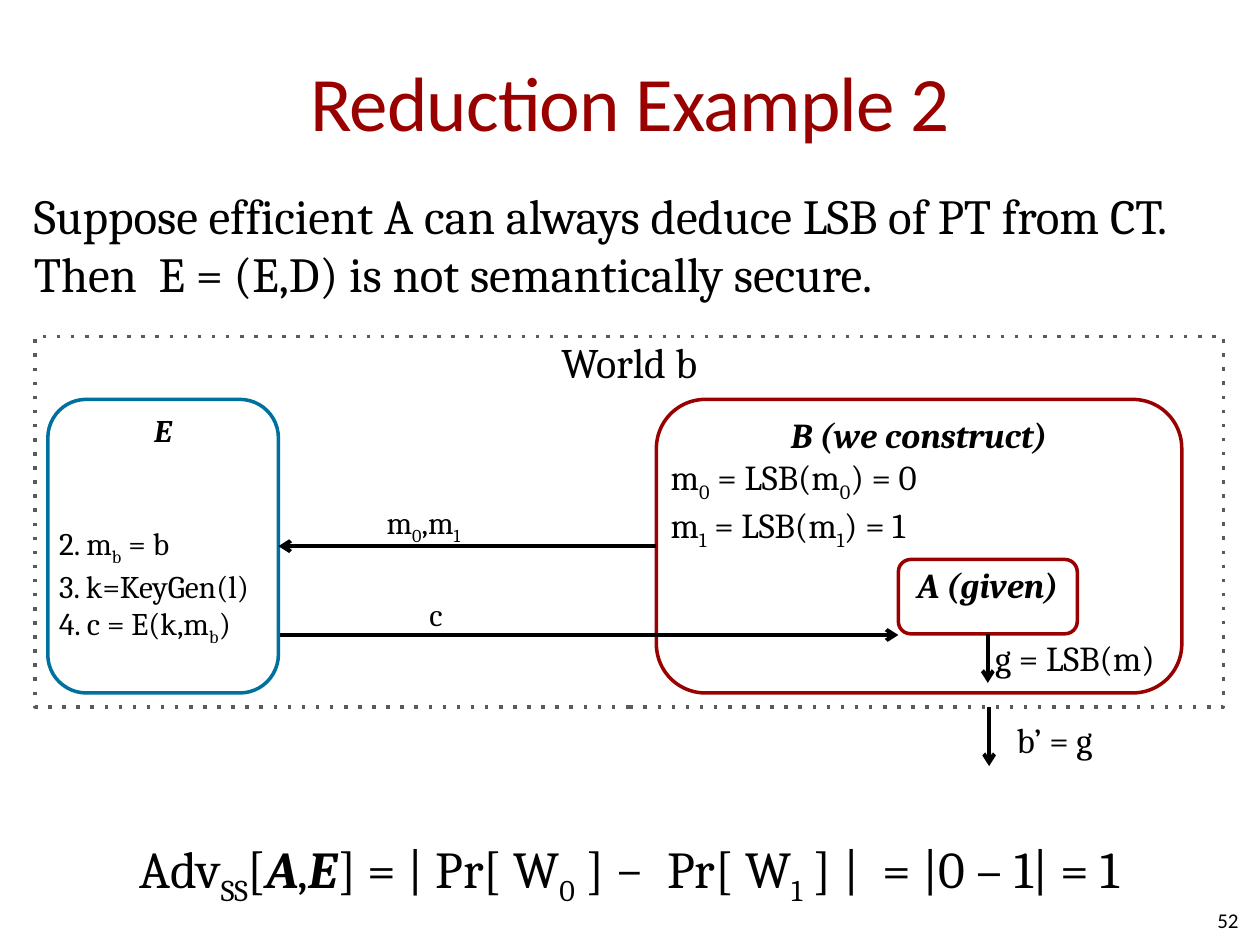
from dataclasses import dataclass

from lxml.etree import SubElement
from pptx import Presentation
from pptx.dml.color import RGBColor
from pptx.enum.shapes import MSO_AUTO_SHAPE_TYPE as Preset, MSO_CONNECTOR as Connector
from pptx.enum.text import MSO_ANCHOR as Anchor, PP_ALIGN as Align
from pptx.oxml.ns import qn
from pptx.util import Inches, Pt


@dataclass(frozen=True)
class Theme:
    """Fonts, colours and sizes of the slide."""
    heading_font: str = "Calibri"
    body_font: str = "Cambria"
    black: str = "000000"
    white: str = "FFFFFF"
    red: str = "990000"
    blue: str = "00709E"
    grey: str = "595A5A"
    title: float = 44
    formula: float = 29.6
    statement: float = 28
    world: float = 24
    party: float = 20
    step: float = 18
    number: float = 12
    outline: float = 2
    arrow: float = 2.25


THEME = Theme()
DEFAULT_INSETS = (0.1, 0.05, 0.1, 0.05)
NO_INSETS = (0, 0, 0, 0)

TITLE = [["Reduction Example 2"]]
STATEMENT = [["Suppose efficient A can always deduce LSB of PT from CT.  "
              "Then  E = (E,D) is not semantically secure."]]
FORMULA = [["Adv", ("SS", "sub"), "[", ("A", "strong"), ",", ("E", "strong"),
            "] = | Pr[ W", ("0", "sub"), " ] −  Pr[ W", ("1", "sub"),
            " ] |  = |0 – 1| = 1"]]
PAGE_NUMBER = [["52"]]

ENCRYPTOR_TEXT = [
    [("E", "strong")],
    ["2. m", ("b", "sub"), " = b"],
    ["3. k=KeyGen(l)"],
    ["4. c = E(k,m", ("b", "sub"), ")"],
]
BUILDER_TEXT = [[("B (we construct)", "strong")]] + [
    ["m", (bit, "sub"), " = LSB(m", (bit, "sub"), f") = {bit}"] for bit in "01"
]

BOXES = {
    "encryptor": (Preset.ROUNDED_RECTANGLE, (0.38, 3.17, 1.83, 2.33), THEME.white,
                  THEME.blue, THEME.step, ENCRYPTOR_TEXT),
    "given": (Preset.ROUNDED_RECTANGLE, (7.13, 4.44, 1.42, 0.59), THEME.white,
              THEME.red, THEME.party, [[("A (given)", "strong")]]),
    "world": (Preset.RECTANGLE, (0.28, 2.67, 9.43, 2.94), None,
              THEME.grey, THEME.world, [["World b"]]),
    "builder": (Preset.ROUNDED_RECTANGLE, (5.21, 3.17, 4.17, 2.33), None,
                THEME.red, THEME.party, BUILDER_TEXT),
}

ARROWS = [
    ((5.21, 4.33), (2.21, 4.33), ("builder", 1), ("encryptor", 3)),
    ((2.22, 5.04), (7.13, 5.04), None, None),
    ((7.84, 5.03), (7.84, 5.42), ("given", 2), None),
    ((7.85, 5.61), (7.85, 6.08), None, None),
]

LABELS = [
    ((2.97, 3.94, 1, 0.58), ["m", ("0", "sub"), ",m", ("1", "sub")],
     THEME.step, Align.LEFT),
    ((3.22, 4.67, 0.48, 0.42), ["c"], THEME.step, Align.CENTER),
    ((7.8, 5, 1.55, 0.42), ["g = LSB(m)"], THEME.party, Align.LEFT),
    ((7.97, 5.65, 1.42, 0.42), ["b’ = g"], THEME.party, Align.LEFT),
]


def write(shape, paragraphs, size, alignments, font=THEME.body_font,
          color=THEME.black, insets=DEFAULT_INSETS, anchor=Anchor.TOP, wrap=True):
    frame = shape.text_frame
    frame.word_wrap = wrap
    frame.vertical_anchor = anchor
    (frame.margin_left, frame.margin_top,
     frame.margin_right, frame.margin_bottom) = map(Inches, insets)
    for index, pieces in enumerate(paragraphs):
        paragraph = frame.add_paragraph() if index else frame.paragraphs[0]
        paragraph.alignment = alignments[min(index, len(alignments) - 1)]
        for piece in pieces:
            text, style = (piece, "") if isinstance(piece, str) else piece
            run = paragraph.add_run()
            run.text = text
            run.font.name = font
            run.font.size = Pt(size)
            run.font.color.rgb = RGBColor.from_string(color)
            run.font.bold = run.font.italic = style == "strong"
            if style == "sub":
                run.font._element.set("baseline", "-25000")
    return frame


def add_text(slide, place, paragraphs, size, alignment, **options):
    shape = slide.shapes.add_textbox(*map(Inches, place))
    return write(shape, paragraphs, size, [alignment], **options)


def add_box(slide, preset, place, fill, line, size, paragraphs):
    shape = slide.shapes.add_shape(preset, *map(Inches, place))
    shape.shadow.inherit = False
    if fill:
        shape.fill.solid()
        shape.fill.fore_color.rgb = RGBColor.from_string(fill)
    else:
        shape.fill.background()
    shape.line.color.rgb = RGBColor.from_string(line)
    shape.line.width = Pt(THEME.outline)
    write(shape, paragraphs, size, [Align.CENTER, Align.LEFT], insets=NO_INSETS)
    return shape


def add_arrow(slide, start, end, source, target, boxes):
    arrow = slide.shapes.add_connector(Connector.STRAIGHT, *map(Inches, start + end))
    if source:
        arrow.begin_connect(boxes[source[0]], source[1])
    if target:
        arrow.end_connect(boxes[target[0]], target[1])
    arrow.line.color.rgb = RGBColor.from_string(THEME.black)
    arrow.line.width = Pt(THEME.arrow)
    SubElement(arrow.line._get_or_add_ln(), qn("a:tailEnd"), type="arrow")
    SubElement(arrow._element.spPr, qn("a:effectLst"))


def main():
    presentation = Presentation()
    presentation.slide_width, presentation.slide_height = Inches(10), Inches(7.5)
    slide = presentation.slides.add_slide(presentation.slide_layouts[6])

    title = add_text(slide, (0.5, 0.17, 9, 1.25), TITLE, THEME.title, Align.CENTER,
                     font=THEME.heading_font, color=THEME.red,
                     insets=(0, 0.05, 0, 0.05), anchor=Anchor.MIDDLE)
    title.paragraphs[0].runs[0].font._element.set("spc", "-50")
    add_text(slide, (0.5, 6.59, 9, 0.53), FORMULA, THEME.formula, Align.CENTER)
    add_text(slide, (7.5, 7.1, 2.33, 0.4), PAGE_NUMBER, THEME.number, Align.RIGHT,
             font=THEME.heading_font, insets=NO_INSETS, anchor=Anchor.MIDDLE)
    add_text(slide, (0.17, 1.42, 9.83, 1.22), STATEMENT, THEME.statement, Align.LEFT)

    boxes = {name: add_box(slide, *details) for name, details in BOXES.items()}
    SubElement(boxes["world"].line._get_or_add_ln(), qn("a:prstDash"), val="dot")
    boxes["encryptor"].text_frame.paragraphs[1].space_before = Pt(43)
    for arrow in ARROWS:
        add_arrow(slide, *arrow, boxes)
    for place, pieces, size, alignment in LABELS:
        add_text(slide, place, [pieces], size, alignment, wrap=False)

    presentation.save("out.pptx")


if __name__ == "__main__":
    main()
